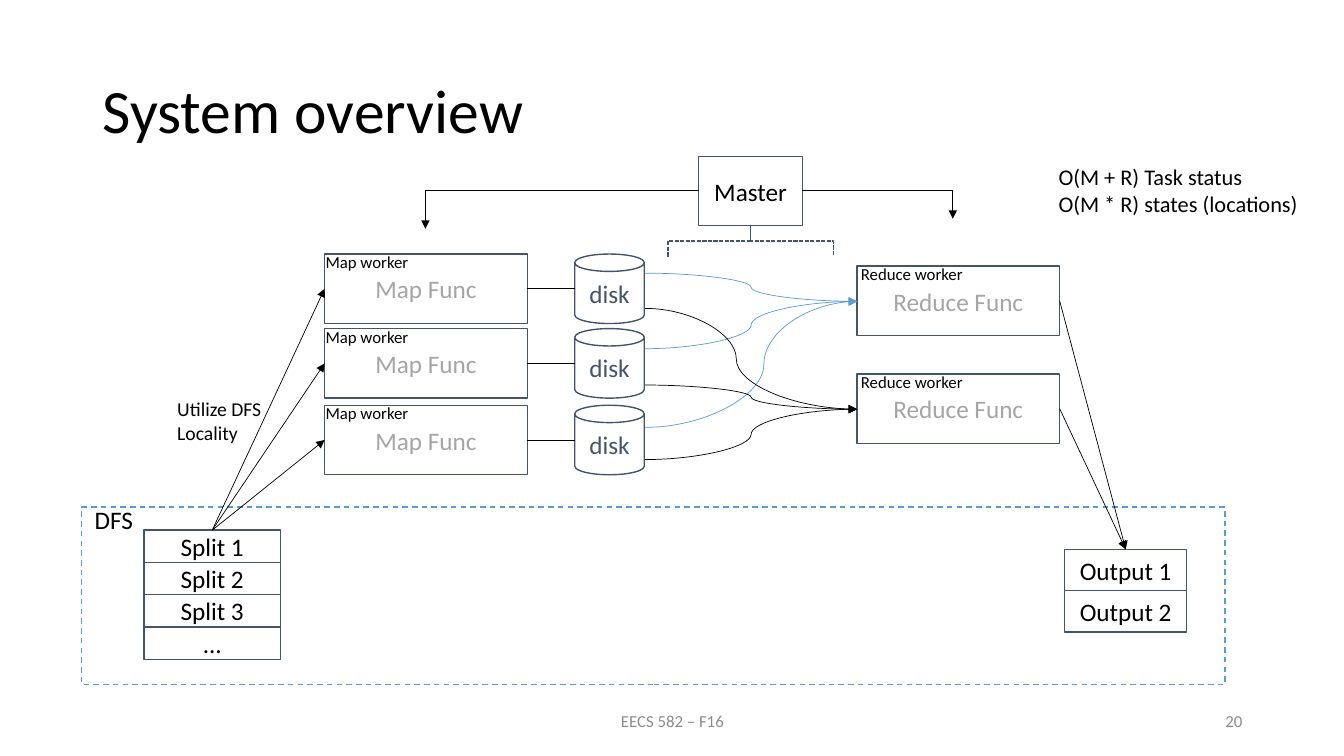
from dataclasses import dataclass

from lxml import etree
from pptx import Presentation, util as u
from pptx.dml import color
from pptx.enum import dml, shapes, text
from pptx.oxml import ns

BLACK, SLATE, BLUE, GREY, FOOTER = "000000", "44546A", "5B9BD5", "A5A5A5", "8C8C8C"
RECTANGLE = shapes.MSO_SHAPE.RECTANGLE
STRAIGHT, ELBOW, CURVE = (shapes.MSO_CONNECTOR.STRAIGHT, shapes.MSO_CONNECTOR.ELBOW,
                          shapes.MSO_CONNECTOR.CURVE)
LEFT, CENTER, RIGHT = text.PP_ALIGN.LEFT, text.PP_ALIGN.CENTER, text.PP_ALIGN.RIGHT
TOP, MIDDLE = text.MSO_ANCHOR.TOP, text.MSO_ANCHOR.MIDDLE
TOP_SIDE, LEFT_SIDE, RIGHT_SIDE = 0, 1, 3


@dataclass
class Label:
    words: str
    left: float
    top: float
    width: float
    height: float
    size: int
    ink: str = BLACK
    align: int = LEFT
    anchor: int = TOP
    spacing: float = 1.0


@dataclass
class Flow:
    """A curved path from a disk to a reduce worker."""
    start_y: float
    end_y: float
    ink: str
    bend: float = 0.5


def rgb(value: str) -> color.RGBColor:
    return color.RGBColor.from_string(value)


def write(shape, label: Label) -> None:
    frame = shape.text_frame
    for name, value in {"word_wrap": True, "vertical_anchor": label.anchor}.items():
        setattr(frame, name, value)
    for index, words in enumerate(label.words.split("\n")):
        paragraph = frame.paragraphs[0] if index == 0 else frame.add_paragraph()
        paragraph.alignment = label.align
        paragraph.line_spacing = label.spacing
        run = paragraph.add_run()
        run.text = words
        for name, value in {"name": "Calibri", "size": u.Pt(label.size)}.items():
            setattr(run.font, name, value)
        run.font.color.rgb = rgb(label.ink)


def add_label(slide, label: Label) -> None:
    box = [u.Inches(n) for n in (label.left, label.top, label.width, label.height)]
    write(slide.shapes.add_textbox(*box), label)


def add_box(slide, words: str, left: float, top: float, width: float, height: float,
            ink: str = BLACK, kind=RECTANGLE, outline: str = SLATE, dash=None):
    shape = slide.shapes.add_shape(kind, *[u.Inches(n) for n in (left, top, width, height)])
    shape.shadow.inherit = False
    shape.fill.background()
    shape.line.color.rgb = rgb(outline)
    for name, value in {"width": u.Pt(1), "dash_style": dash}.items():
        setattr(shape.line, name, value)
    if words:
        write(shape, Label(words, left, top, width, height, 18, ink, CENTER, MIDDLE))
    return shape


def add_line(slide, start: tuple, end: tuple, kind=STRAIGHT, ink: str = BLACK,
             arrow: bool = True, bend: float | None = None):
    line = slide.shapes.add_connector(kind, *[u.Inches(n) for n in (*start, *end)])
    line.line.color.rgb = rgb(ink)
    line.line.width = u.Pt(0.5)
    properties = line._element.spPr
    if arrow:
        etree.SubElement(line.line._get_or_add_ln(), ns.qn("a:tailEnd"), type="triangle")
    if bend is not None:
        guides = properties.find(ns.qn("a:prstGeom")).get_or_add_avLst()
        etree.SubElement(guides, ns.qn("a:gd"), name="adj1", fmla=f"val {round(bend * 100000)}")
    etree.SubElement(properties, ns.qn("a:effectLst"))
    return line


def join(slide, source, source_side: int, target, target_side: int) -> None:
    line = add_line(slide, (0, 0), (1, 1))
    line.begin_connect(source, source_side)
    line.end_connect(target, target_side)


def build_slide(slide) -> None:
    # Title, footer and notes
    for label in (
        Label("System overview", 0.92, 0.4, 11.5, 1.45, 44, anchor=MIDDLE, spacing=0.9),
        Label("EECS 582 – F16", 4.42, 6.95, 4.5, 0.4, 12, FOOTER, CENTER, MIDDLE),
        Label("20", 9.42, 6.95, 3, 0.4, 12, FOOTER, RIGHT, MIDDLE),
        Label("DFS", 0.84, 4.95, 0.63, 0.4, 18),
        Label("O(M + R) Task status\nO(M * R) states (locations)", 10.4, 1.57, 2.69, 0.64, 16),
        Label("Utilize DFS Locality", 1.66, 3.89, 1.36, 0.57, 14),
    ):
        add_label(slide, label)

    # File system with input splits and outputs
    add_box(slide, "", 0.81, 5.03, 11.34, 1.76, outline=BLUE, dash=dml.MSO_LINE.DASH)
    splits = [add_box(slide, words, 1.43, 5.26 + 0.32 * row, 1.35, 0.32)
              for row, words in enumerate(("Split 1", "Split 2", "Split 3", "…"))]
    outputs = [add_box(slide, f"Output {row + 1}", 10.56, 5.45 + 0.41 * row, 1.21, 0.41)
               for row in range(2)]

    # Map workers, each with its disk
    for top in (2.52, 3.26, 4.02):
        mapper = add_box(slide, "Map Func", 3.22, top, 2.01, 0.69, GREY)
        add_box(slide, "disk", 5.7, top, 0.69, 0.69, SLATE, shapes.MSO_SHAPE.CAN)
        middle = top + 0.345
        link = add_line(slide, (5.23, middle), (5.7, middle), arrow=False)
        link.begin_connect(mapper, RIGHT_SIDE)
        add_label(slide, Label("Map worker", 3.13, top - 0.07, 1.12, 0.3, 12))
        join(slide, splits[0], TOP_SIDE, mapper, LEFT_SIDE)

    # Reduce workers
    for top in (2.64, 3.71):
        reducer = add_box(slide, "Reduce Func", 8.5, top, 2.01, 0.69, GREY)
        add_label(slide, Label("Reduce worker", 8.44, top - 0.07, 1.28, 0.3, 12))
        join(slide, reducer, RIGHT_SIDE, outputs[0], TOP_SIDE)

    # Shuffle from the disks to the reduce workers
    for flow in (
        Flow(2.71, 2.99, BLUE),
        Flow(3.46, 2.99, BLUE),
        Flow(4.24, 2.99, BLUE, 0.56),
        Flow(3.06, 4.06, BLACK, 0.43),
        Flow(3.82, 4.06, BLACK),
        Flow(4.56, 4.06, BLACK),
    ):
        add_line(slide, (6.4, flow.start_y), (8.5, flow.end_y), CURVE, flow.ink, bend=flow.bend)

    # Master, its brace and the arrows to both worker groups
    add_box(slide, "Master", 6.93, 1.55, 1.03, 0.69)
    brace = add_box(slide, "", 7.29, 1.57, 0.31, 1.64, kind=shapes.MSO_SHAPE.RIGHT_BRACE,
                    dash=dml.MSO_LINE.SQUARE_DOT)
    brace.rotation = 270
    brace.adjustments[0] = 0
    for start, end in (((6.93, 1.89), (4.22, 2.27)), ((7.95, 1.89), (9.45, 2.17))):
        add_line(slide, start, end, ELBOW, bend=1)


def main() -> None:
    presentation = Presentation()
    presentation.slide_width, presentation.slide_height = u.Inches(13.33), u.Inches(7.5)
    build_slide(presentation.slides.add_slide(presentation.slide_layouts[6]))
    presentation.save("out.pptx")


if __name__ == "__main__":
    main()
